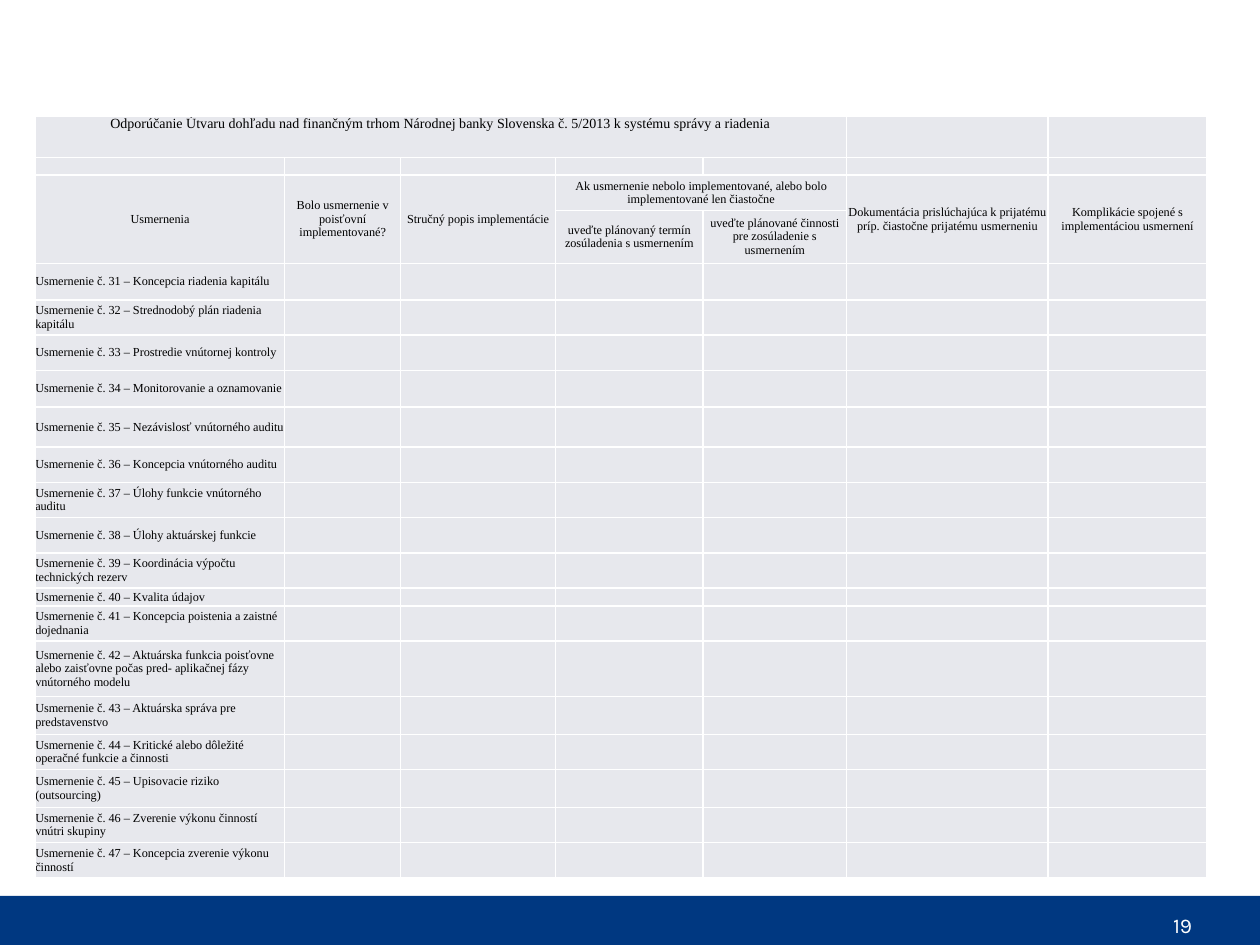
import pptx
import pptx.util
import pptx.dml.color
import pptx.enum.shapes
import pptx.enum.text
import lxml.etree

Inches, Pt = pptx.util.Inches, pptx.util.Pt
RGB = pptx.dml.color.RGBColor.from_string
ALIGN, ANCHOR = pptx.enum.text.PP_ALIGN, pptx.enum.text.MSO_ANCHOR
A = "{http://schemas.openxmlformats.org/drawingml/2006/main}"
COLORS = {"band": "003881", "cell": "E7E8ED", "line": "FFFFFF", "text": "000000"}

TITLE = ("Odporúčanie Útvaru dohľadu nad finančným trhom Národnej banky Slovenska "
         "č. 5/2013 k systému správy a riadenia")
HEADERS = {
    (2, 0): "Usmernenia",
    (2, 1): "Bolo usmernenie v poisťovní implementované?",
    (2, 2): "Stručný popis implementácie",
    (2, 3): "Ak usmernenie nebolo implementované, alebo bolo implementované len čiastočne",
    (2, 5): "Dokumentácia prislúchajúca k prijatému príp. čiastočne prijatému usmerneniu",
    (2, 6): "Komplikácie spojené s implementáciou usmernení",
    (3, 3): "uveďte plánovaný termín zosúladenia s usmernením",
    (3, 4): "uveďte plánované činnosti pre zosúladenie s usmernením",
}
FIRST_NUMBER = 31
GUIDELINES = [  # name, row height
    ("Koncepcia riadenia kapitálu", 0.29),
    ("Strednodobý plán riadenia kapitálu", 0.28),
    ("Prostredie vnútornej kontroly", 0.28),
    ("Monitorovanie a oznamovanie", 0.29),
    ("Nezávislosť vnútorného auditu", 0.32),
    ("Koncepcia vnútorného auditu", 0.28),
    ("Úlohy funkcie vnútorného auditu", 0.28),
    ("Úlohy aktuárskej funkcie", 0.28),
    ("Koordinácia výpočtu technických rezerv", 0.28),
    ("Kvalita údajov", 0.14),
    ("Koncepcia poistenia a zaistné dojednania", 0.28),
    ("Aktuárska funkcia poisťovne alebo zaisťovne počas pred- aplikačnej fázy "
     "vnútorného modelu", 0.44),
    ("Aktuárska správa pre predstavenstvo", 0.3),
    ("Kritické alebo dôležité operačné funkcie a činnosti", 0.28),
    ("Upisovacie riziko (outsourcing)", 0.3),
    ("Zverenie výkonu činností vnútri skupiny", 0.28),
    ("Koncepcia zverenie výkonu činností", 0.28),
]
COL_WIDTHS = [1.98, 0.92, 1.23, 1.17, 1.14, 1.6, 1.26]
ROW_HEIGHTS = [0.33, 0.14, 0.28, 0.42] + [height for _, height in GUIDELINES]
HEADER_ROWS = len(ROW_HEIGHTS) - len(GUIDELINES)
SPANS = [((0, 0), (0, 4)), ((2, 3), (2, 4))] + [((2, c), (3, c)) for c in (0, 1, 2, 5, 6)]

texts = {(0, 0): TITLE, **HEADERS}
for i, (name, _) in enumerate(GUIDELINES):
    texts[HEADER_ROWS + i, 0] = f"Usmernenie č. {FIRST_NUMBER + i} – {name}"


def add_borders(cell):
    tcPr = cell._tc.get_or_add_tcPr()
    for side in ("lnL", "lnR", "lnT", "lnB"):
        ln = lxml.etree.SubElement(tcPr, A + side, w=str(Pt(1)))
        fill = lxml.etree.SubElement(ln, A + "solidFill")
        lxml.etree.SubElement(fill, A + "srgbClr", val=COLORS["line"])


prs = pptx.Presentation()
prs.slide_width, prs.slide_height = Inches(10), Inches(7.5)
s = prs.slides.add_slide(prs.slide_layouts[6])

# Footer band and page number
band = s.shapes.add_shape(pptx.enum.shapes.MSO_SHAPE.RECTANGLE,
                          0, Inches(7.11), prs.slide_width, Inches(0.39))
band.shadow.inherit = False
band.fill.solid()
band.fill.fore_color.rgb = RGB(COLORS["band"])
band.line.fill.background()

tf = s.shapes.add_textbox(Inches(8.62), Inches(7.19), Inches(0.94), Inches(0.31)).text_frame
tf.vertical_anchor = ANCHOR.MIDDLE
tf.word_wrap = True
p = tf.paragraphs[0]
p.text = "19"
p.alignment = ALIGN.RIGHT
p.font.name, p.font.size = "Karla", Pt(12)
p.font.color.rgb = RGB(COLORS["line"])

# Guideline table
table = s.shapes.add_table(len(ROW_HEIGHTS), len(COL_WIDTHS), Inches(0.28), Inches(0.92),
                           Inches(sum(COL_WIDTHS)), Inches(sum(ROW_HEIGHTS))).table
table.first_row = table.horz_banding = False
for column, width in zip(table.columns, COL_WIDTHS):
    column.width = Inches(width)
for row, height in zip(table.rows, ROW_HEIGHTS):
    row.height = Inches(height)

for r, row in enumerate(table.rows):
    for c, cell in enumerate(row.cells):
        add_borders(cell)
        cell.fill.solid()
        cell.fill.fore_color.rgb = RGB(COLORS["cell"])
        cell.margin_left = cell.margin_right = cell.margin_top = cell.margin_bottom = 0
        cell.vertical_anchor = ANCHOR.MIDDLE if r else ANCHOR.TOP
        p = cell.text_frame.paragraphs[0]
        p.alignment = ALIGN.CENTER if r < HEADER_ROWS else ALIGN.LEFT
        p.font.name, p.font.size, p.font.bold = "Times New Roman", Pt(7 if r else 8), False
        p.font.color.rgb = RGB(COLORS["text"])
        if (r, c) in texts:
            p.text = texts[r, c]
        else:  # keeps empty cells from stretching low rows
            lxml.etree.SubElement(p._p, A + "endParaRPr", sz="700")

for start, end in SPANS:
    table.cell(*start).merge(table.cell(*end))

prs.save("out.pptx")
